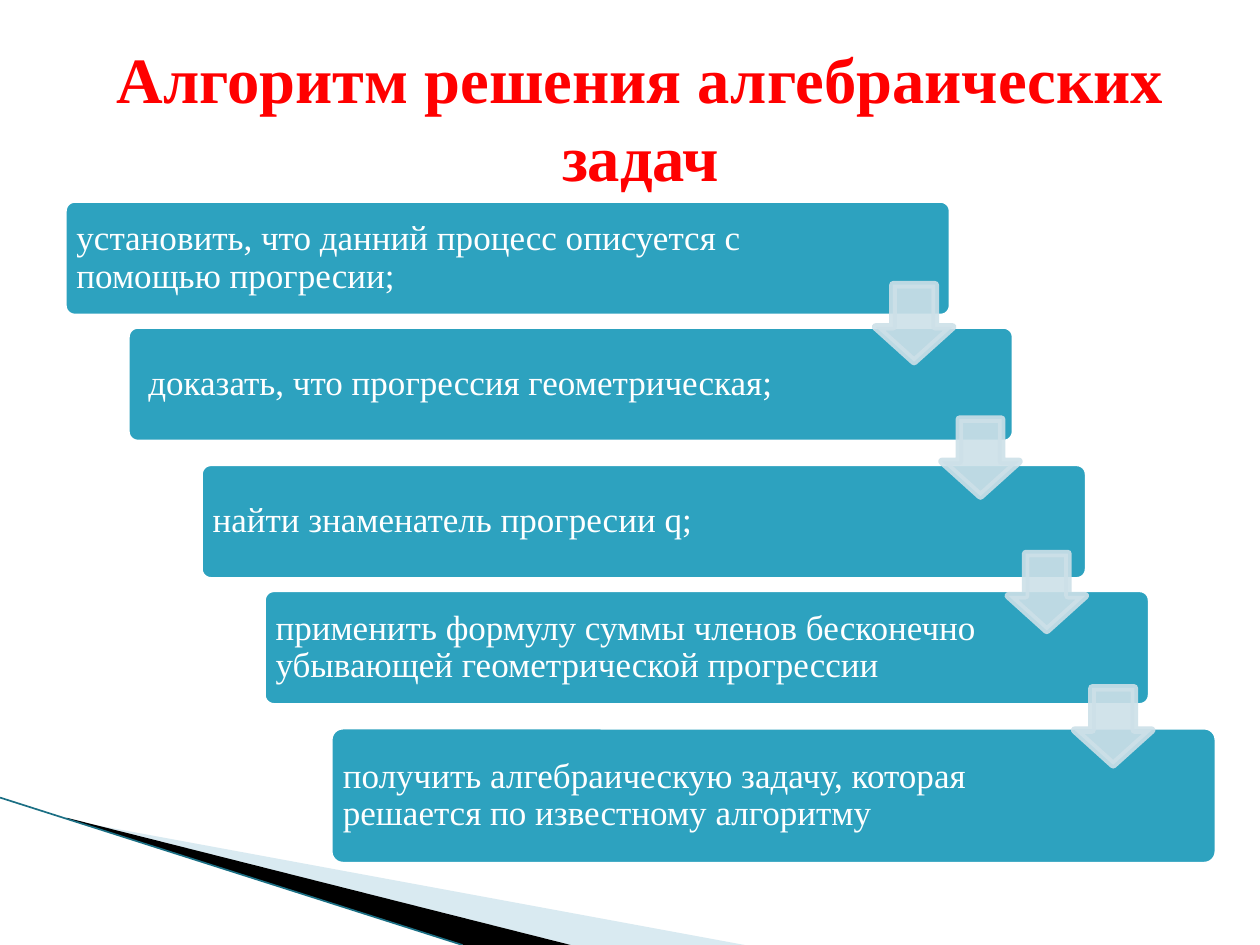
from lxml import etree
from pptx import Presentation
from pptx.dml.color import RGBColor
from pptx.enum import shapes as sh, text as tx
from pptx.oxml.ns import qn
from pptx.util import Inches, Pt

FONT = "Times New Roman"
TITLE = "Алгоритм решения алгебраических задач"
RED, WHITE, BLACK = "FF0000", "FFFFFF", "000000"
TEAL, DARK, PALE, SKY = "2DA2BF", "1B6F84", "CDE0E8", "A0CBDC"

STEPS = [
    {"words": "установить, что данний процесс описуется с помощью прогресии;",
     "left": 0.5, "top": 1.58},
    {"words": "доказать, что прогрессия геометрическая;",
     "left": 1, "top": 2.58, "inset": 0.15},
    {"words": "найти знаменатель прогресии q;",
     "left": 1.58, "top": 3.67},
    {"words": "применить формулу суммы членов бесконечно убывающей геометрической прогрессии",
     "left": 2.08, "top": 4.67},
    {"words": "получить алгебраическую задачу, которая решается по известному алгоритму",
     "left": 2.61, "top": 5.76, "height": 1.11},
]
CARD_WIDTH, CARD_HEIGHT = 7.06, 0.94
INSET, ARROW_ROOM = 0.08, 1.18
BORDER = 4.33

ARROW_SIZE = 0.61
FIRST_ARROW, LAST_ARROW = (6.95, 2.26), (8.53, 5.46)

RAYS = [
    {"points": [(0.55, 6.51), (5.91, 7.5), (4.53, 7.5), (0.55, 6.5)],
     "color": SKY, "alpha": 40},
    {"points": [(0.53, 6.49), (4.53, 7.5), (3.68, 7.5), (0.54, 6.5)],
     "color": BLACK, "alpha": 100},
]
EDGE = [(0, 6.33), (3.67, 7.5)]


def tint(fill, color):
    fill.solid()
    fill.fore_color.rgb = RGBColor.from_string(color)


def paint(shape, color, border=None, alpha=100):
    shape.shadow.inherit = False
    tint(shape.fill, color)
    if border:
        tint(shape.line.fill, border)
        shape.line.width = Pt(BORDER)
    else:
        shape.line.fill.background()
    if alpha < 100:
        for node in shape._element.spPr.iter(qn("a:srgbClr")):
            etree.SubElement(node, qn("a:alpha"), val=str(alpha * 1000))


def write(shape, words, size, color, align, spacing=1.0, bold=False):
    frame = shape.text_frame
    frame.word_wrap = True
    frame.vertical_anchor = tx.MSO_ANCHOR.MIDDLE
    para = frame.paragraphs[0]
    para.alignment = align
    para.line_spacing = spacing
    run = para.add_run()
    run.text = words
    run.font.name = FONT
    run.font.size = Pt(size)
    run.font.bold = bold
    tint(run.font.fill, color)


def add_ray(items, ray):
    start, *rest = [(Inches(x), Inches(y)) for x, y in ray["points"]]
    pen = items.build_freeform(*start)
    pen.add_line_segments(rest)
    paint(pen.convert_to_shape(), ray["color"], alpha=ray["alpha"])


def add_edge(items):
    ends = [Inches(value) for point in EDGE for value in point]
    edge = items.add_connector(sh.MSO_CONNECTOR.STRAIGHT, *ends)
    tint(edge.line.fill, DARK)
    edge.line.width = Pt(0.95)
    etree.SubElement(edge._element.spPr, qn("a:effectLst"))


def add_card(items, step):
    height = step.get("height", CARD_HEIGHT)
    card = items.add_shape(sh.MSO_SHAPE.ROUNDED_RECTANGLE,
                           Inches(step["left"]), Inches(step["top"]),
                           Inches(CARD_WIDTH), Inches(height))
    card.adjustments[0] = 0.1
    paint(card, TEAL, WHITE)
    write(card, step["words"], 20, WHITE, tx.PP_ALIGN.LEFT, 0.9)
    frame = card.text_frame
    frame.margin_left = Inches(step.get("inset", INSET))
    frame.margin_right = Inches(ARROW_ROOM)
    frame.margin_top = frame.margin_bottom = Inches(INSET)


def add_arrow(items, share):
    left, top = [first + share * (last - first)
                 for first, last in zip(FIRST_ARROW, LAST_ARROW)]
    arrow = items.add_shape(sh.MSO_SHAPE.DOWN_ARROW, Inches(left), Inches(top),
                            Inches(ARROW_SIZE), Inches(ARROW_SIZE))
    arrow.adjustments[0] = 0.55
    arrow.adjustments[1] = 0.45
    paint(arrow, PALE, PALE, 90)


def add_title(items):
    title = items.add_textbox(Inches(0.5), Inches(0.3), Inches(9.17), Inches(1.25))
    write(title, TITLE, 36.9, RED, tx.PP_ALIGN.CENTER, bold=True)


def main():
    deck = Presentation()
    deck.slide_width, deck.slide_height = Inches(10), Inches(7.5)
    items = deck.slides.add_slide(deck.slide_layouts[6]).shapes

    for ray in RAYS:
        add_ray(items, ray)
    add_edge(items)
    for step in STEPS:
        add_card(items, step)
    gaps = len(STEPS) - 1
    for index in range(gaps):
        add_arrow(items, index / (gaps - 1))
    add_title(items)

    deck.save("out.pptx")


if __name__ == "__main__":
    main()
